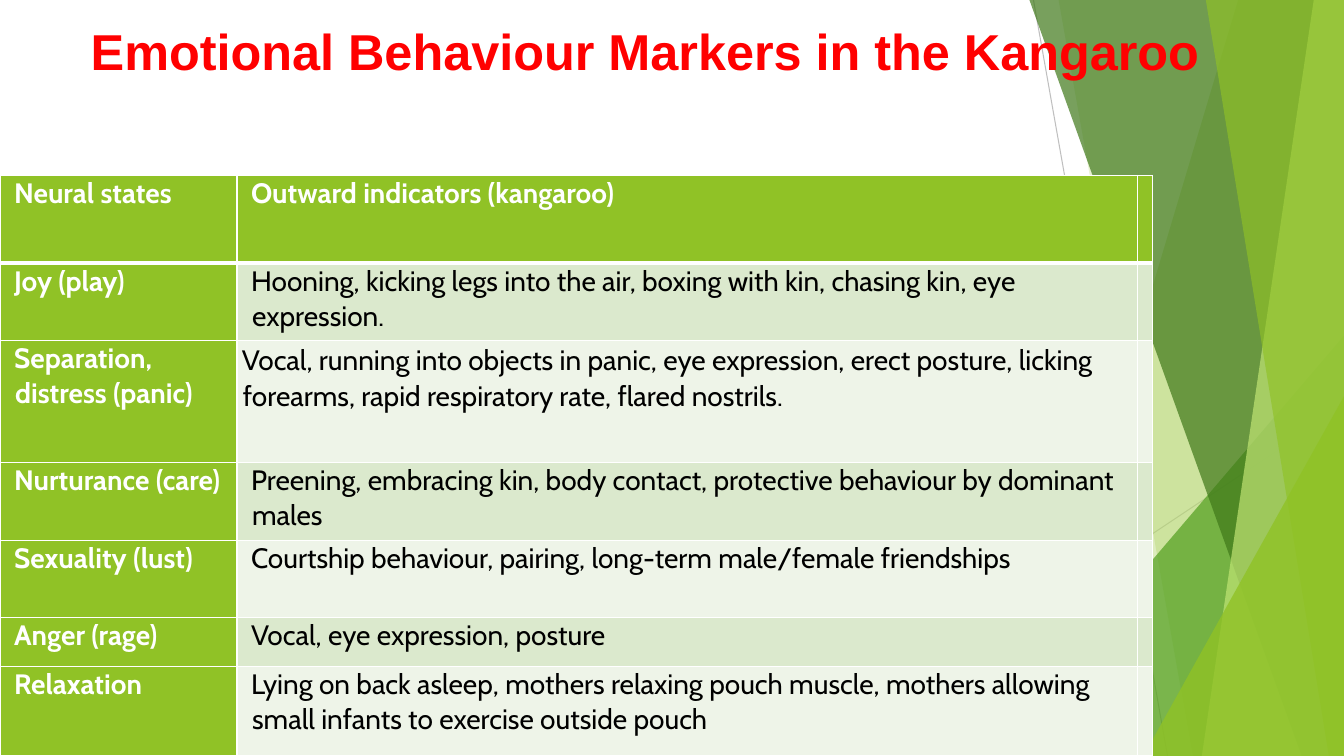
from lxml.etree import SubElement
from pptx import Presentation
from pptx.dml.color import RGBColor
from pptx.enum.shapes import MSO_CONNECTOR, MSO_SHAPE
from pptx.enum.text import MSO_ANCHOR, MSO_AUTO_SIZE, PP_ALIGN
from pptx.oxml.ns import qn
from pptx.util import Inches, Pt

WIDE, HIGH = 13.33, 7.5
WHITE = RGBColor(0xFF, 0xFF, 0xFF)
BLACK = RGBColor(0, 0, 0)
RED = RGBColor(0xFF, 0, 0)
LIME = RGBColor(0x90, 0xC2, 0x26)
LEAF = RGBColor(0x54, 0xA0, 0x21)
MOSS = RGBColor(0x3F, 0x78, 0x19)
PALE = RGBColor(0xC0, 0xE4, 0x74)
GREY = RGBColor(0xBF, 0xBF, 0xBF)
MIST = RGBColor(0xD9, 0xD9, 0xD9)
BANDS = [RGBColor(0xEE, 0xF4, 0xE8), RGBColor(0xDB, 0xE9, 0xCD)]

COLS = [2.35, 8.93, 0.15]
ROWS = [
    (0.87, "Neural states", "Outward indicators (kangaroo)"),
    (0.77, "Joy (play)",
     "Hooning, kicking legs into the air, boxing with kin, chasing kin, eye expression."),
    (1.21, "Separation, distress (panic)",
     "Vocal, running into objects in panic, eye expression, erect posture, "
     "licking forearms, rapid respiratory rate, flared nostrils."),
    (0.77, "Nurturance (care)",
     "Preening, embracing kin, body contact, protective behaviour by dominant males"),
    (0.77, "Sexuality (lust)",
     "Courtship behaviour, pairing, long-term male/female friendships"),
    (0.48, "Anger (rage)", "Vocal, eye expression, posture"),
    (0.89, "Relaxation",
     "Lying on back asleep, mothers relaxing pouch muscle, "
     "mothers allowing small infants to exercise outside pouch"),
]
PANIC = 2  # the row whose indicators sit flush left


def add_run(para, text, size, font, color, bold):
    run = para.add_run()
    run.text = text
    run.font.size = Pt(size)
    run.font.name = font
    run.font.bold = bold
    run.font.color.rgb = color


def add_line(slide, start, end, color):
    ends = [Inches(n) for n in (*start, *end)]
    line = slide.shapes.add_connector(MSO_CONNECTOR.STRAIGHT, *ends)
    line.line.color.rgb = color
    line.line.width = Pt(0.75)
    SubElement(line.element.spPr, qn("a:effectLst"))


def tint(shape, color, alpha):
    shape.shadow.inherit = False
    shape.line.fill.background()
    shape.fill.solid()
    shape.fill.fore_color.rgb = color
    tone = shape.element.spPr.find(qn("a:solidFill"))[0]
    SubElement(tone, qn("a:alpha"), val=str(alpha * 1000))


def add_shard(slide, top, base, color, alpha):
    """Fill from a slanted left side to the right edge of the slide."""
    pen = slide.shapes.build_freeform(Inches(top), 0, scale=1.0)
    spots = [(WIDE, 0), (WIDE, HIGH), (base, HIGH)]
    pen.add_line_segments([(Inches(x), Inches(y)) for x, y in spots], close=True)
    tint(pen.convert_to_shape(), color, alpha)


def add_peak(slide, left, top, color, alpha):
    """Triangle that fills the lower right corner."""
    box = [Inches(n) for n in (left, top, WIDE - left, HIGH - top)]
    peak = slide.shapes.add_shape(MSO_SHAPE.ISOSCELES_TRIANGLE, *box)
    peak.adjustments[0] = 1
    tint(peak, color, alpha)


def set_title(slide, text):
    title = slide.shapes.title
    title.left, title.top = Inches(0.8), Inches(0.15)
    title.width, title.height = Inches(11.22), Inches(0.98)
    frame = title.text_frame
    frame.word_wrap = True
    frame.auto_size = MSO_AUTO_SIZE.NONE
    frame.vertical_anchor = MSO_ANCHOR.TOP
    para = frame.paragraphs[0]
    para.alignment = PP_ALIGN.LEFT
    add_run(para, text, 36, "Arial", RED, True)
    slide.shapes.element.append(title.element)  # in front of the shards


def set_edge(cell, side, width):
    props = cell._tc.get_or_add_tcPr()
    edge = SubElement(props, qn("a:" + side), w=str(Pt(width)))
    fill = SubElement(edge, qn("a:solidFill"))
    SubElement(fill, qn("a:srgbClr"), val=str(WHITE))


def set_cell(cell, fill, top, base):
    for side, width in (("lnL", 1), ("lnR", 1), ("lnT", top), ("lnB", base)):
        set_edge(cell, side, width)
    cell.fill.solid()
    cell.fill.fore_color.rgb = fill
    cell.margin_left = cell.margin_right = Inches(0.05)
    cell.margin_top = cell.margin_bottom = 0


def write_cell(cell, text, color, bold, flush):
    para = cell.text_frame.paragraphs[0]
    para.line_spacing = 1.07 if flush else 1.03
    para.space_after = Pt(0 if flush else 8.4)
    props = para._p.get_or_add_pPr()
    props.set("marL", str(Inches(0.01 if flush else 0.1)))
    props.set("indent", str(Inches(-0.01)))
    add_run(para, text, 20, "Cabin", color, bold)


def add_grid(slide):
    high = sum(row[0] for row in ROWS)
    box = [Inches(n) for n in (0, 1.74, sum(COLS), high)]
    grid = slide.shapes.add_table(len(ROWS), len(COLS), *box).table
    for col, width in zip(grid.columns, COLS):
        col.width = Inches(width)
    for r, (height, *texts) in enumerate(ROWS):
        grid.rows[r].height = Inches(height)
        for c in range(len(COLS)):
            cell = grid.cell(r, c)
            head = r == 0 or c == 0
            set_cell(cell, LIME if head else BANDS[r % 2],
                     3 if r == 1 else 1, 3 if r == 0 else 1)
            if c < len(texts):
                write_cell(cell, texts[c], WHITE if head else BLACK, head,
                           r == PANIC and c == 1)


def main():
    deck = Presentation()
    deck.slide_width, deck.slide_height = Inches(WIDE), Inches(HIGH)
    slide = deck.slides.add_slide(deck.slide_layouts[5])

    # Green shards on the right
    add_line(slide, (10.25, 0), (11.58, HIGH), GREY)
    add_line(slide, (WIDE, 4.03), (8.12, HIGH), MIST)
    add_shard(slide, 12.28, 10.04, LIME, 30)
    add_shard(slide, 10.5, 11.83, LIME, 20)
    add_peak(slide, 9.77, 3.33, LEAF, 72)
    add_shard(slide, 10.21, 12.91, MOSS, 70)
    add_shard(slide, 13.03, 11.92, PALE, 70)
    add_shard(slide, 11.96, 13.18, LIME, 65)
    add_peak(slide, 11.34, 3.93, LIME, 80)

    # Title and table
    set_title(slide, "Emotional Behaviour Markers in the Kangaroo")
    add_grid(slide)
    deck.save("out.pptx")


if __name__ == "__main__":
    main()
